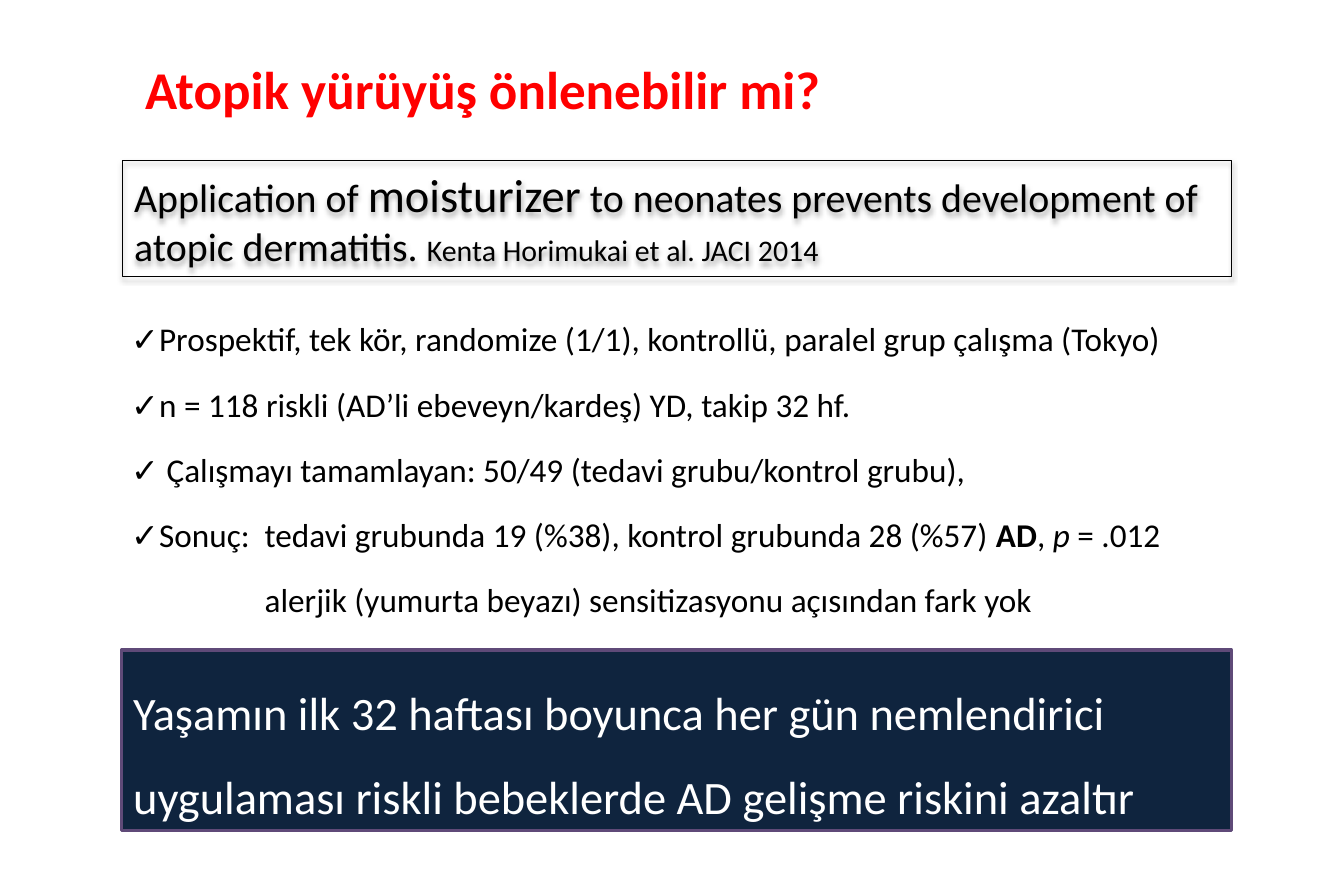
from dataclasses import dataclass
from typing import Optional

from lxml.etree import SubElement
from pptx import Presentation
from pptx.dml.color import RGBColor
from pptx.enum.shapes import MSO_SHAPE
from pptx.enum.text import MSO_ANCHOR, PP_ALIGN
from pptx.oxml.ns import qn
from pptx.util import Length, Pt

PX = 7620  # 120 px to the inch
FONT = "Calibri"
COLORS = {
    "title": "FF0000",
    "text": "000000",
    "light": "FFFFFF",
    "navy": "0F243E",
    "purple": "5F4A78",
}


@dataclass
class Run:
    text: str
    size: Optional[int] = None
    bold: Optional[bool] = None
    italic: Optional[bool] = None


@dataclass
class Line:
    runs: list[Run]
    left: int = 0
    first: int = 0


@dataclass
class Block:
    box: tuple[int, int, int, int]
    lines: list[Line]
    size: Optional[int]
    color: str = "text"
    bold: Optional[bool] = None
    spacing: float | Length = 1.0
    before: float = 0
    anchor: MSO_ANCHOR = MSO_ANCHOR.TOP
    fill: Optional[str] = None
    border: Optional[str] = None
    border_width: float = 0
    shadow: bool = False


def item(*runs: Run) -> Line:
    """Return a check-marked line with a hanging indent."""
    return Line([Run("✓" + runs[0].text), *runs[1:]], left=45, first=-45)


BLOCKS = [
    Block((134, 28, 1100, 122), [Line([Run("Atopik yürüyüş önlenebilir mi?")])],
          32, "title", bold=True, anchor=MSO_ANCHOR.MIDDLE),
    Block((120, 296, 1117, 343), [
        item(Run("Prospektif, tek kör, randomize (1/1), kontrollü, paralel grup çalışma (Tokyo)")),
        item(Run("n = 118 riskli (AD’li ebeveyn/kardeş) YD, takip 32 hf.")),
        item(Run(" Çalışmayı tamamlayan: 50/49 (tedavi grubu/kontrol grubu),")),
        item(Run("Sonuç:  tedavi grubunda 19 (%38), kontrol grubunda 28 (%57) "),
             Run("AD", bold=True), Run(", "), Run("p", italic=True), Run(" = .012")),
        Line([Run("alerjik (yumurta beyazı) sensitizasyonu açısından fark yok")], left=134),
    ], 20, spacing=Pt(35), before=4.2),
    Block((122, 653, 1115, 181), [
        Line([Run("Yaşamın ilk 32 haftası boyunca her gün nemlendirici")]),
        Line([Run("uygulaması riskli bebeklerde AD gelişme riskini azaltır")]),
    ], 28, "light", spacing=1.5, fill="navy", border="purple", border_width=2),
    Block((123, 161, 1114, 117), [Line([
        Run("Application of ", 24),
        Run("moisturizer", 28),
        Run(" to neonates prevents development of atopic dermatitis. ", 24),
        Run("Kenta Horimukai et al. JACI 2014", 18),
    ])], None, border="text", border_width=0.75, shadow=True),
]


def rgb(name: str) -> RGBColor:
    return RGBColor.from_string(COLORS[name])


def add_shadow(shape) -> None:
    effects = shape._element.spPr.find(qn("a:effectLst"))
    outer = SubElement(effects, qn("a:outerShdw"), blurRad=str(Pt(3.1)),
                       dist=str(Pt(1.8)), dir="5400000", rotWithShape="0")
    color = SubElement(outer, qn("a:srgbClr"), val=COLORS["text"])
    SubElement(color, qn("a:alpha"), val="35000")


def add_frame(slide, block: Block):
    """Add the block's rectangle, or a text box if it has no border."""
    box = [value * PX for value in block.box]
    if block.border is None:
        return slide.shapes.add_textbox(*box)
    shape = slide.shapes.add_shape(MSO_SHAPE.RECTANGLE, *box)
    shape.shadow.inherit = False
    if block.fill:
        shape.fill.solid()
        shape.fill.fore_color.rgb = rgb(block.fill)
    else:
        shape.fill.background()
    shape.line.color.rgb = rgb(block.border)
    shape.line.width = Pt(block.border_width)
    if block.shadow:
        add_shadow(shape)
    return shape


def write_line(paragraph, line: Line, block: Block) -> None:
    paragraph.alignment = PP_ALIGN.LEFT
    paragraph.line_spacing = block.spacing
    paragraph.space_before = Pt(block.before)
    properties = paragraph._p.get_or_add_pPr()
    properties.set("marL", str(line.left * PX))
    properties.set("indent", str(line.first * PX))
    font = paragraph.font
    font.name = FONT
    font.color.rgb = rgb(block.color)
    font.bold = block.bold
    if block.size:
        font.size = Pt(block.size)
    for part in line.runs:
        run = paragraph.add_run()
        run.text = part.text
        run.font.bold = part.bold
        run.font.italic = part.italic
        if part.size:
            run.font.size = Pt(part.size)


def add_block(slide, block: Block) -> None:
    frame = add_frame(slide, block).text_frame
    frame.word_wrap = True
    frame.vertical_anchor = block.anchor
    for index, line in enumerate(block.lines):
        paragraph = frame.add_paragraph() if index else frame.paragraphs[0]
        write_line(paragraph, line, block)


def main() -> None:
    presentation = Presentation()
    presentation.slide_width = 1350 * PX
    presentation.slide_height = 900 * PX
    slide = presentation.slides.add_slide(presentation.slide_layouts[6])
    for block in BLOCKS:
        add_block(slide, block)
    presentation.save("out.pptx")


if __name__ == "__main__":
    main()
